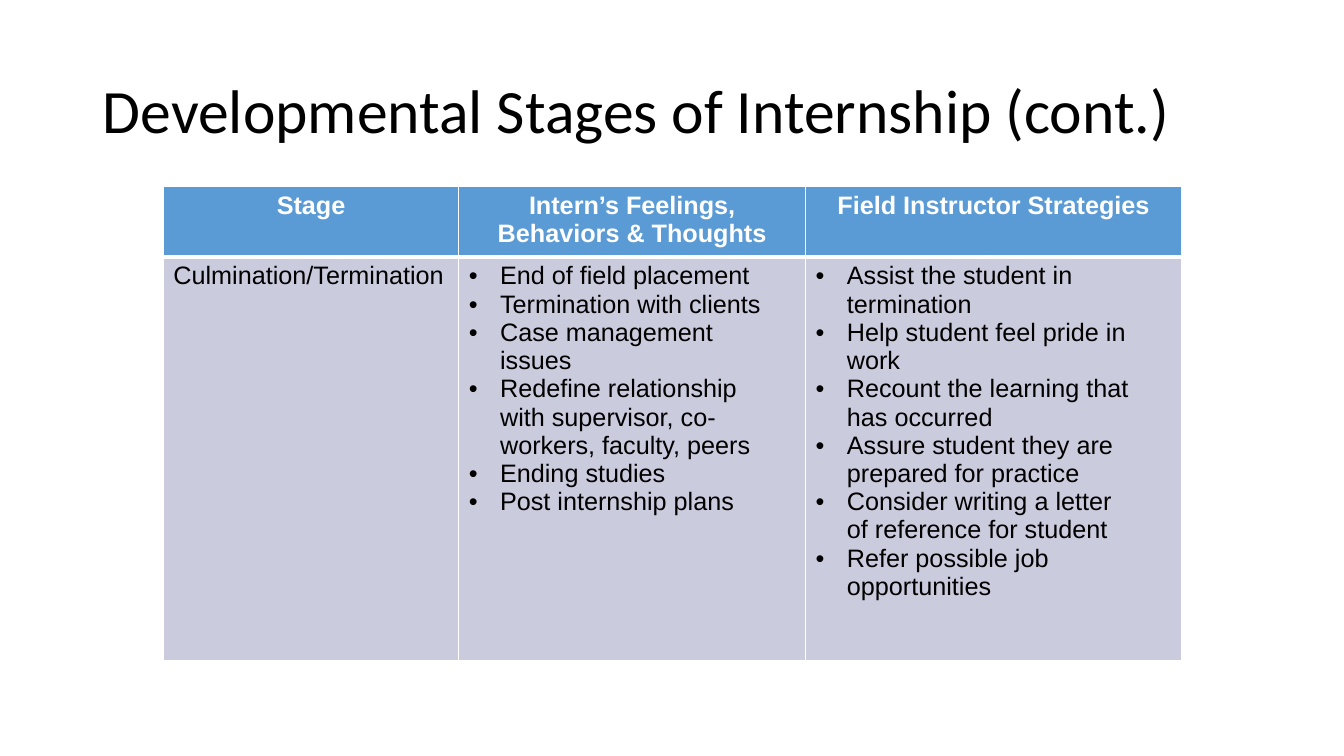
import dataclasses

import lxml.etree
import pptx
import pptx.dml.color
import pptx.enum.text
import pptx.oxml.ns
import pptx.util

Inches = pptx.util.Inches
Pt = pptx.util.Pt
RGBColor = pptx.dml.color.RGBColor
Align = pptx.enum.text.PP_ALIGN


@dataclasses.dataclass(frozen=True)
class Theme:
    title_font: str = "Calibri"
    table_font: str = "Arial"
    title_size: int = 44
    table_size: int = 18
    text: str = "000000"
    header_text: str = "FFFFFF"
    header_fill: str = "5B9BD5"
    body_fill: str = "CBCBDE"
    border: str = "FFFFFF"
    thin: int = 1
    thick: int = 3


THEME = Theme()
COLUMN_WIDTHS = (2.93, 3.44, 3.73)
ROW_HEIGHTS = (0.7, 4)
INDENT = 0.31

HEADERS = ("Stage", "Intern’s Feelings, Behaviors & Thoughts", "Field Instructor Strategies")
STAGE = "Culmination/Termination"
# A vertical tab is a line break inside a bullet
FEELINGS = (
    "End of field placement",
    "Termination with clients",
    "Case management\vissues",
    "Redefine relationship\vwith supervisor, co-workers, faculty, peers",
    "Ending studies",
    "Post internship plans",
)
STRATEGIES = (
    "Assist the student in termination",
    "Help student feel pride in work",
    "Recount the learning that has occurred",
    "Assure student they are prepared for practice",
    "Consider writing a letter\vof reference for student",
    "Refer possible job\vopportunities",
)


def add_element(parent, tag, **attributes):
    return lxml.etree.SubElement(parent, pptx.oxml.ns.qn(tag), **attributes)


def style_font(font, name, size, color, bold=False):
    font.name = name
    font.size = Pt(size)
    font.bold = bold
    font.color.rgb = RGBColor.from_string(color)


def add_bullet(para):
    properties = para._p.get_or_add_pPr()
    properties.set("marL", str(Inches(INDENT)))
    properties.set("indent", str(-Inches(INDENT)))
    add_element(properties, "a:buFont", typeface=THEME.table_font)
    add_element(properties, "a:buChar", char="•")


def set_borders(cell, top, bottom):
    properties = cell._tc.get_or_add_tcPr()
    widths = {"a:lnL": THEME.thin, "a:lnR": THEME.thin, "a:lnT": top, "a:lnB": bottom}
    for tag, width in widths.items():
        line = add_element(properties, tag, w=str(Pt(width)))
        add_element(add_element(line, "a:solidFill"), "a:srgbClr", val=THEME.border)


def fill_cell(cell, lines, header=False, bulleted=False):
    # Borders come before the fill in the cell properties
    if header:
        set_borders(cell, THEME.thin, THEME.thick)
    else:
        set_borders(cell, THEME.thick, THEME.thin)
    cell.fill.solid()
    cell.fill.fore_color.rgb = RGBColor.from_string(
        THEME.header_fill if header else THEME.body_fill)

    frame = cell.text_frame
    for index, line in enumerate(lines):
        para = frame.add_paragraph() if index else frame.paragraphs[0]
        para.text = line
        para.alignment = Align.CENTER if header else Align.LEFT
        if bulleted:
            add_bullet(para)
        color = THEME.header_text if header else THEME.text
        style_font(para.font, THEME.table_font, THEME.table_size, color, header)


def place_title(page, left, top, width, height):
    title = page.shapes.title
    title.left, title.top = Inches(left), Inches(top)
    title.width, title.height = Inches(width), Inches(height)
    frame = title.text_frame
    frame.text = "Developmental Stages of Internship (cont.)"
    frame.word_wrap = True
    frame.auto_size = pptx.enum.text.MSO_AUTO_SIZE.NONE
    frame.vertical_anchor = pptx.enum.text.MSO_ANCHOR.MIDDLE
    para = frame.paragraphs[0]
    para.alignment = Align.LEFT
    para.line_spacing = 0.9
    style_font(para.font, THEME.title_font, THEME.title_size, THEME.text)


def place_stage_table(page, left, top):
    table = page.shapes.add_table(
        len(ROW_HEIGHTS), len(COLUMN_WIDTHS), Inches(left), Inches(top),
        Inches(sum(COLUMN_WIDTHS)), Inches(sum(ROW_HEIGHTS))).table
    for column, width in zip(table.columns, COLUMN_WIDTHS):
        column.width = Inches(width)
    for row, height in zip(table.rows, ROW_HEIGHTS):
        row.height = Inches(height)

    # Header row
    for index, header in enumerate(HEADERS):
        fill_cell(table.cell(0, index), [header], header=True)

    # Stage row
    fill_cell(table.cell(1, 0), [STAGE])
    for index, bullets in enumerate((FEELINGS, STRATEGIES), start=1):
        fill_cell(table.cell(1, index), bullets, bulleted=True)


def main():
    deck = pptx.Presentation()
    deck.slide_width, deck.slide_height = Inches(13.33), Inches(7.5)
    page = deck.slides.add_slide(deck.slide_layouts.get_by_name("Title Only"))
    place_title(page, 0.92, 0.4, 11.5, 1.45)
    place_stage_table(page, 1.62, 1.85)
    deck.save("out.pptx")


if __name__ == "__main__":
    main()
